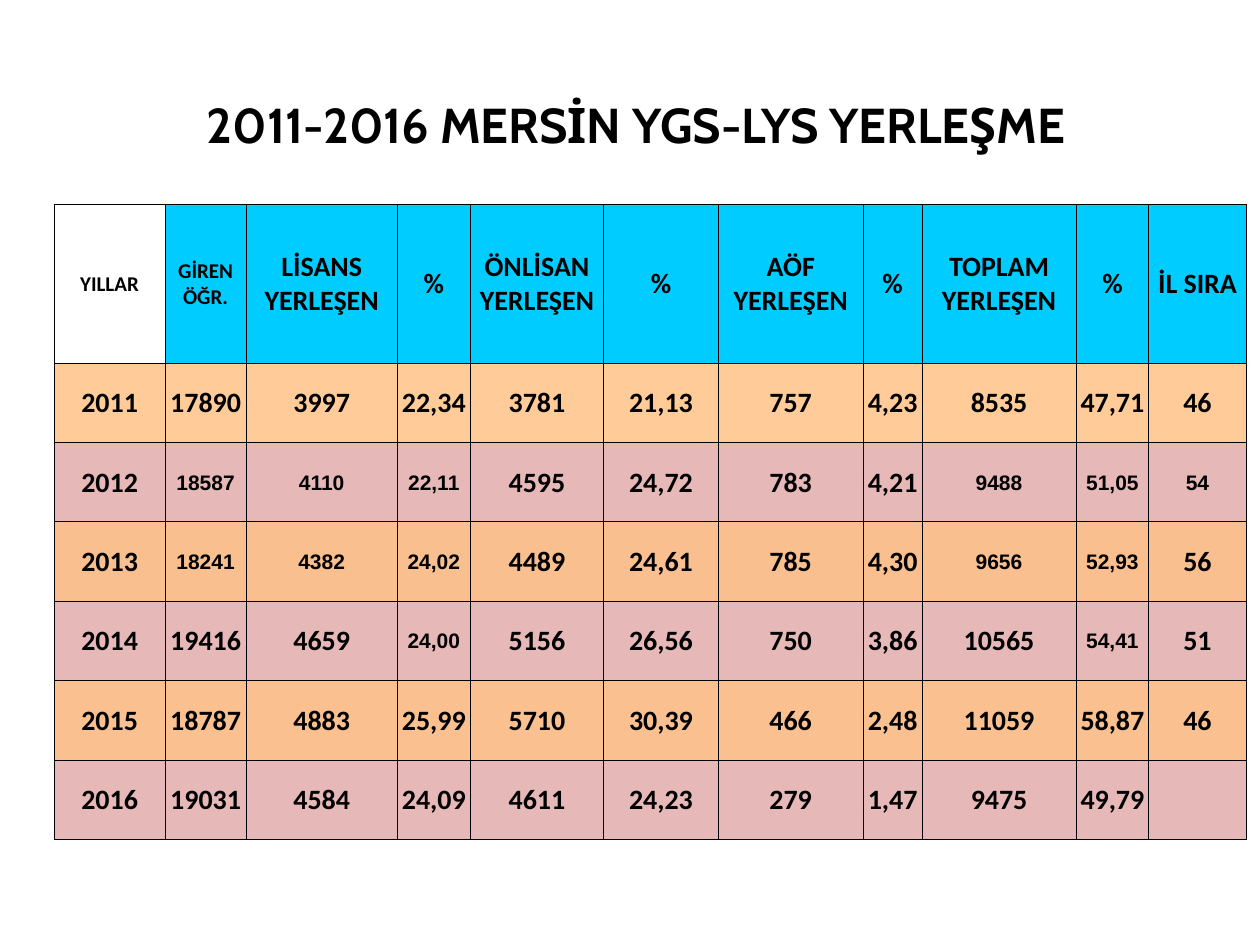
from lxml.etree import SubElement
from pptx import Presentation
from pptx.dml.color import RGBColor
from pptx.enum.text import MSO_ANCHOR, PP_ALIGN
from pptx.oxml.ns import qn
from pptx.util import Cm, Pt

BLACK = "000000"
HEADER_FILL = "00CCFF"
COLUMN_WIDTHS = [2.24, 1.63, 3.05, 1.47, 2.69, 2.31, 2.92, 1.19, 3.1, 1.47, 1.96]
HEADER_HEIGHT = 3.2
YEAR_HEIGHT = 1.6
HEADERS = ["YILLAR", "GİREN ÖĞR.", "LİSANS YERLEŞEN", "%", "ÖNLİSAN YERLEŞEN", "%",
           "AÖF YERLEŞEN", "%", "TOPLAM YERLEŞEN", "%", "İL SIRA"]
YEARS = [
    ("FFCC99", "2011 17890 3997 22,34 3781 21,13 757 4,23 8535 47,71 46", ()),
    ("E6B8B7", "2012 18587 4110 22,11 4595 24,72 783 4,21 9488 51,05 54", (1, 2, 3, 8, 9, 10)),
    ("FABF8F", "2013 18241 4382 24,02 4489 24,61 785 4,30 9656 52,93 56", (1, 2, 3, 8, 9)),
    ("E6B8B7", "2014 19416 4659 24,00 5156 26,56 750 3,86 10565 54,41 51", (3, 9)),
    ("FAC090", "2015 18787 4883 25,99 5710 30,39 466 2,48 11059 58,87 46", ()),
    ("E6B8B7", "2016 19031 4584 24,09 4611 24,23 279 1,47 9475 49,79", ()),
]


def color(value):
    return RGBColor.from_string(value)


def write(frame, text, size, font):
    paragraph = frame.paragraphs[0]
    paragraph.text = text
    paragraph.alignment = PP_ALIGN.CENTER
    paragraph.font.name = font
    paragraph.font.size = Pt(size)
    paragraph.font.bold = True
    paragraph.font.color.rgb = color(BLACK)


def add_title(page, text):
    box = page.shapes.add_textbox(Cm(1.5), Cm(1.78), Cm(22.63), Cm(1.45))
    box.text_frame.word_wrap = True
    write(box.text_frame, text, 28, "Cabin")


def add_borders(cell):
    properties = cell._tc.get_or_add_tcPr()
    for position, side in enumerate(("lnL", "lnR", "lnT", "lnB")):
        line = properties.makeelement(qn(f"a:{side}"), {"w": str(Pt(0.5))})
        fill = SubElement(line, qn("a:solidFill"))
        SubElement(fill, qn("a:srgbClr"), val=BLACK)
        properties.insert(position, line)


def fill_cell(cell, text, fill, size=16, font="Calibri"):
    cell.margin_left = cell.margin_right = cell.margin_top = Cm(0.02)
    cell.margin_bottom = 0
    cell.vertical_anchor = MSO_ANCHOR.MIDDLE
    if fill:
        cell.fill.solid()
        cell.fill.fore_color.rgb = color(fill)
    else:
        cell.fill.background()
    add_borders(cell)
    write(cell.text_frame, text, size, font)


def add_placement_table(page):
    row_heights = [HEADER_HEIGHT] + [YEAR_HEIGHT] * len(YEARS)
    table = page.shapes.add_table(
        len(row_heights), len(COLUMN_WIDTHS), Cm(1.09), Cm(4.12),
        Cm(sum(COLUMN_WIDTHS)), Cm(sum(row_heights))).table
    for column, width in zip(table.columns, COLUMN_WIDTHS):
        column.width = Cm(width)
    for row, height in zip(table.rows, row_heights):
        row.height = Cm(height)

    for index, header in enumerate(HEADERS):
        fill_cell(table.cell(0, index), header, HEADER_FILL if index else None,
                  12 if index < 2 else 16)
    for row_index, (fill, figures, small_columns) in enumerate(YEARS, start=1):
        values = figures.split()
        for index in range(len(HEADERS)):
            text = values[index] if index < len(values) else ""
            style = (12, "Arial") if index in small_columns else (16, "Calibri")
            fill_cell(table.cell(row_index, index), text, fill, *style)


def main():
    deck = Presentation()
    deck.slide_width, deck.slide_height = Cm(25.4), Cm(19.05)
    page = deck.slides.add_slide(deck.slide_layouts[6])
    add_title(page, "2011-2016 MERSİN YGS-LYS YERLEŞME")
    add_placement_table(page)
    deck.save("out.pptx")


if __name__ == "__main__":
    main()
